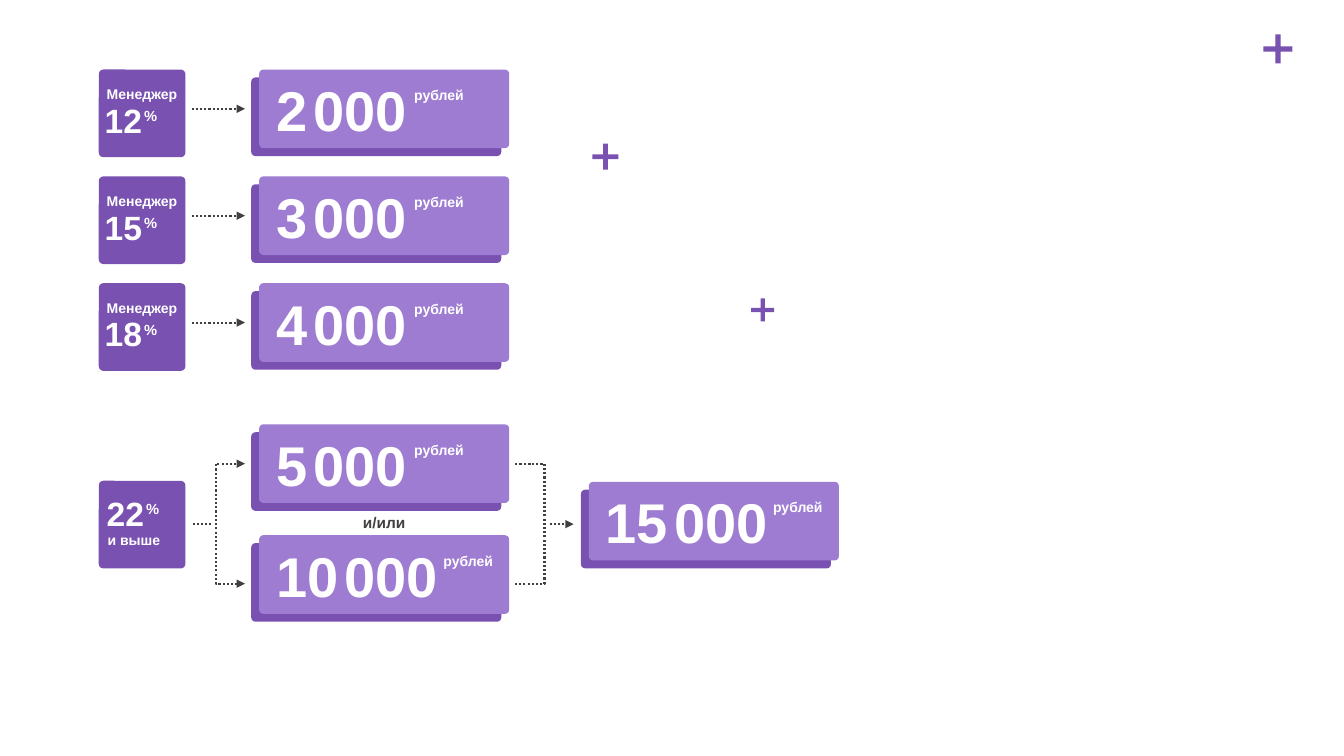
from lxml.etree import SubElement
from pptx import Presentation
from pptx.dml.color import RGBColor
from pptx.enum.dml import MSO_LINE
from pptx.enum.shapes import MSO_CONNECTOR, MSO_SHAPE as SHAPE
from pptx.enum.text import MSO_AUTO_SIZE, PP_ALIGN as ALIGN
from pptx.oxml.ns import qn
from pptx.util import Inches, Pt

WHITE = RGBColor(0xFF, 0xFF, 0xFF)
DARK_GRAY = RGBColor(0x40, 0x40, 0x40)
PURPLE = RGBColor(0x79, 0x51, 0xB1)
LILAC = RGBColor(0x9E, 0x7C, 0xD2)
CARD_LEFT, CARD_WIDTH, CARD_HEIGHT = 2.57, 2.48, 0.78
TILE_LEFT, TILE_WIDTH, TILE_HEIGHT = 0.98, 0.86, 0.87


def add_text(slide, box, spans, color=WHITE, align=ALIGN.LEFT):
    """Write one bold line made of (text, size) spans."""
    shape = slide.shapes.add_textbox(*map(Inches, box))
    frame = shape.text_frame
    frame.word_wrap = True
    frame.auto_size = MSO_AUTO_SIZE.SHAPE_TO_FIT_TEXT
    para = frame.paragraphs[0]
    para.alignment = align
    for text, size in spans:
        span = para.add_run()
        span.text = text
        span.font.name = "Arial"
        span.font.size = Pt(size)
        span.font.bold = True
        span.font.color.rgb = color


def add_filled(slide, kind, box, color, adjustment):
    """Add a borderless preset shape of one colour."""
    shape = slide.shapes.add_shape(kind, *map(Inches, box))
    shape.shadow.inherit = False
    shape.adjustments[0] = adjustment
    shape.fill.solid()
    shape.fill.fore_color.rgb = color
    shape.line.fill.background()
    return shape


def style_dotted(shape, ends=()):
    """Give a line dots and triangles at the named ends."""
    shape.line.color.rgb = DARK_GRAY
    shape.line.width = Pt(1.5)
    shape.line.dash_style = MSO_LINE.ROUND_DOT
    outline = shape.line._get_or_add_ln()
    for end in ends:
        SubElement(outline, qn(f"a:{end}"), type="triangle")


def add_dotted_line(slide, left, right, y, ends=("tailEnd",)):
    """Draw a horizontal dotted line, by default an arrow."""
    line = slide.shapes.add_connector(
        MSO_CONNECTOR.STRAIGHT, Inches(left), Inches(y), Inches(right), Inches(y))
    style_dotted(line, ends)
    SubElement(line._element.spPr, qn("a:effectLst"))


def add_bracket(slide, kind, left, ends=()):
    """Draw a square dotted bracket spanning the two lower cards."""
    bracket = slide.shapes.add_shape(kind, *map(Inches, (left, 4.6, 0.29, 1.19)))
    bracket.shadow.inherit = False
    bracket.adjustments[0] = 0
    bracket.fill.background()
    style_dotted(bracket, ends)


def add_card(slide, left, top, thousands):
    """Place a bonus card with its hard shadow, amount and unit."""
    card = add_filled(slide, SHAPE.ROUNDED_RECTANGLE,
                      (left, top, CARD_WIDTH, CARD_HEIGHT), LILAC, 0.054)
    effects = card._element.spPr.find(qn("a:effectLst"))
    shadow = SubElement(effects, qn("a:outerShdw"), blurRad="0", dist=str(Pt(8)),
                        dir="8100000", algn="tr", rotWithShape="0")
    SubElement(shadow, qn("a:srgbClr"), val=str(PURPLE))
    add_text(slide, (left + 0.07, top + 0.01, 2.33, 0.77),
             [(thousands, 40), (" ", 16), ("000", 40)])
    unit_left = left + 1.44 + 0.29 * (len(thousands) - 1)
    add_text(slide, (unit_left, top + 0.12, 0.92, 0.27), [("рублей", 10)])


def add_tile(slide, top, number, label, number_at, label_at):
    """Place a percentage tile, its parts offset from the tile corner."""
    add_filled(slide, SHAPE.ROUNDED_RECTANGLE,
               (TILE_LEFT, top, TILE_WIDTH, TILE_HEIGHT), PURPLE, 0.054)
    left, number_top = TILE_LEFT + number_at[0], top + number_at[1]
    add_text(slide, (TILE_LEFT + label_at[0], top + label_at[1], 1.15, 0.27),
             [(label, 10)])
    add_text(slide, (left, number_top, 0.91, 0.5), [(number, 24)])
    add_text(slide, (left + 0.39, number_top + 0.07, 0.39, 0.28), [("%", 10.5)])


def add_manager_row(slide, top, percent, thousands):
    """Join a manager tile to its bonus card."""
    add_card(slide, CARD_LEFT, top, thousands)
    add_tile(slide, top, percent, "Менеджер", (-0.04, 0.25), (-0.02, 0.11))
    add_dotted_line(slide, 1.9, 2.43, top + 0.39)


def add_top_tier(slide):
    """Branch the top tile into two cards and join them in a total."""
    add_card(slide, 5.84, 4.78, "15")
    add_dotted_line(slide, 1.91, 2.11, 5.2, ends=())
    add_tile(slide, 4.77, "22", "и выше", (-0.02, 0.07), (-0.01, 0.45))
    add_card(slide, CARD_LEFT, 4.21, "5")
    add_card(slide, CARD_LEFT, 5.31, "10")
    add_text(slide, (CARD_LEFT, 5.04, CARD_WIDTH, 0.29), [("и/или", 11)],
             color=DARK_GRAY, align=ALIGN.CENTER)
    add_bracket(slide, SHAPE.LEFT_BRACKET, 2.14, ("headEnd", "tailEnd"))
    add_bracket(slide, SHAPE.RIGHT_BRACKET, 5.11)
    add_dotted_line(slide, 5.45, 5.69, 5.2)


def main():
    """Build and save the bonus slide."""
    deck = Presentation()
    deck.slide_width, deck.slide_height = Inches(13.33), Inches(7.5)
    page = deck.slides.add_slide(deck.slide_layouts[6])
    rows = [("12", "2"), ("15", "3"), ("18", "4")]
    for index, (percent, thousands) in enumerate(rows):
        add_manager_row(page, 0.69 + 1.06 * index, percent, thousands)
    add_top_tier(page)
    for left, top, size in [(12.48, 0.29, 0.39), (7.41, 2.92, 0.31), (5.83, 1.38, 0.35)]:
        add_filled(page, SHAPE.MATH_PLUS, (left, top, size, size), PURPLE, 0.134)
    deck.save("out.pptx")


if __name__ == "__main__":
    main()
